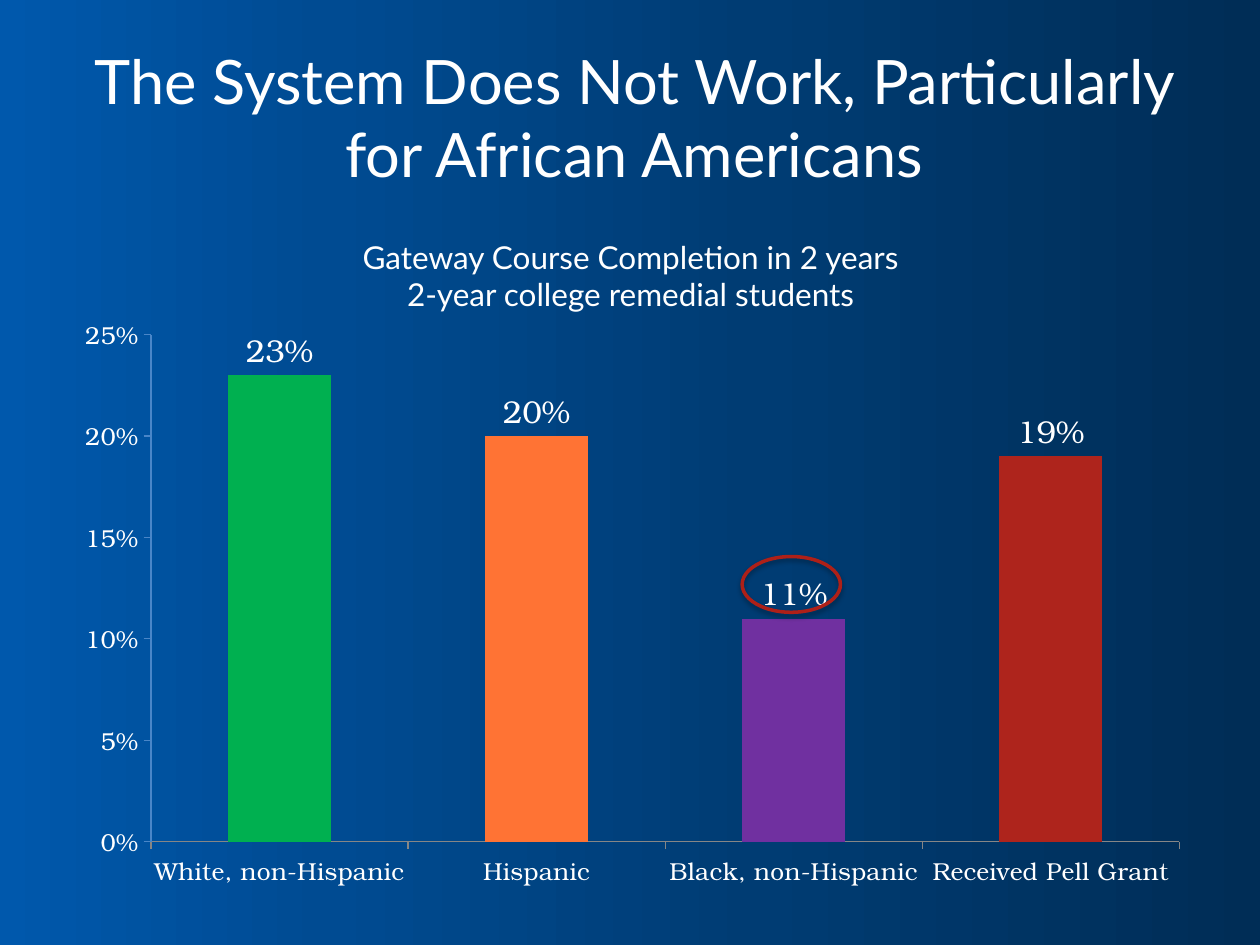
from lxml.etree import SubElement
from pptx import Presentation
from pptx.chart.data import CategoryChartData as Data
from pptx.dml.color import RGBColor as RGB
from pptx.enum.chart import XL_CHART_TYPE as Kind, XL_LABEL_POSITION as Spot, XL_TICK_MARK as Tick
from pptx.enum.shapes import MSO_SHAPE as Form
from pptx.enum.text import MSO_ANCHOR as Anchor, PP_ALIGN as Align
from pptx.oxml.ns import qn
from pptx.util import Inches, Pt

WHITE = RGB(0xFF, 0xFF, 0xFF)
BLACK = RGB(0, 0, 0)
BASE = RGB(0x00, 0x5A, 0xAC)
GREEN = RGB(0x00, 0xB0, 0x50)
ORANGE = RGB(0xFF, 0x73, 0x34)
PURPLE = RGB(0x70, 0x30, 0xA0)
BRICK = RGB(0xAE, 0x24, 0x1C)
RED = RGB(0xAE, 0x20, 0x18)
GRAY = RGB(0x86, 0x86, 0x86)
SKY = RGB(0x4A, 0x86, 0xC8)
STOPS = (
    (0, RGB(0x00, 0x58, 0xAC)),
    (26, RGB(0x00, 0x4B, 0x92)),
    (60, RGB(0x00, 0x3C, 0x73)),
    (100, RGB(0x00, 0x2D, 0x56)),
)
SANS = "Lato"
SERIF = "TeX Gyre Bonum"
WIDE, HIGH = 10, 7.5
RATES = {
    "White, non-Hispanic": (0.23, GREEN),
    "Hispanic": (0.20, ORANGE),
    "Black, non-Hispanic": (0.11, PURPLE),
    "Received Pell Grant": (0.19, BRICK),
}


def area(left, top, width, height):
    return [Inches(n) for n in (left * WIDE, top * HIGH, width * WIDE, height * HIGH)]


def style(font, size, color, face):
    font.size = Pt(size)
    font.color.rgb = color
    font.name = face
    font.bold = False


def shade(shape):
    shape.shadow.inherit = False
    effect = shape._element.spPr.find(qn("a:effectLst"))
    drop = SubElement(effect, qn("a:outerShdw"), blurRad=str(Pt(3.1)),
                      dist=str(Pt(1.8)), dir="5400000", rotWithShape="0")
    tint = SubElement(drop, qn("a:srgbClr"), val=str(BLACK))
    SubElement(tint, qn("a:alpha"), val="35000")


def ground(slide, box):
    back = slide.background.fill
    back.solid()
    back.fore_color.rgb = BASE
    panel = slide.shapes.add_shape(Form.RECTANGLE, *box)
    panel.line.fill.background()
    panel.fill.gradient()
    panel.fill.gradient_angle = 0
    stops = panel._element.spPr.find(qn("a:gradFill")).find(qn("a:gsLst"))
    for old in list(stops):
        stops.remove(old)
    for share, color in STOPS:
        stop = SubElement(stops, qn("a:gs"), pos=str(share * 1000))
        SubElement(stop, qn("a:srgbClr"), val=str(color))
    shade(panel)


def words(slide, box, lines, size, anchor):
    frame = slide.shapes.add_textbox(*box).text_frame
    frame.word_wrap = True
    frame.vertical_anchor = anchor
    for i, line in enumerate(lines):
        para = frame.paragraphs[0] if i == 0 else frame.add_paragraph()
        para.alignment = Align.CENTER
        run = para.add_run()
        run.text = line
        style(run.font, size, WHITE, SANS)


def layout(chart, **shares):
    plot = chart._chartSpace.chart.plotArea
    for old in plot.findall(qn("c:layout")):
        plot.remove(old)
    outer = SubElement(plot, qn("c:layout"))
    plot.insert(0, outer)
    inner = SubElement(outer, qn("c:manualLayout"))
    SubElement(inner, qn("c:layoutTarget"), val="inner")
    for side in "xy":
        SubElement(inner, qn(f"c:{side}Mode"), val="edge")
    for side, share in shares.items():
        SubElement(inner, qn(f"c:{side}"), val=str(share))


def bars(slide, box):
    data = Data(number_format="0%")
    data.categories = list(RATES)
    data.add_series("Series 1", [rate for rate, _ in RATES.values()])
    chart = slide.shapes.add_chart(Kind.COLUMN_CLUSTERED, *box, data).chart
    style(chart.font, 10, BLACK, SERIF)
    chart.has_legend = False
    chart.has_title = False
    layout(chart, x=0.077, y=0.05, w=0.9, h=0.86)

    for axis, color in ((chart.category_axis, GRAY), (chart.value_axis, SKY)):
        axis.has_major_gridlines = False
        axis.major_tick_mark = Tick.OUTSIDE
        axis.minor_tick_mark = Tick.NONE
        axis.format.line.color.rgb = color
        axis.format.line.width = Pt(0.75)
        style(axis.tick_labels.font, 14, WHITE, SERIF)
    scale = chart.value_axis
    scale.minimum_scale, scale.maximum_scale, scale.major_unit = 0, 0.25, 0.05
    scale.tick_labels.number_format = "0%"
    scale.tick_labels.number_format_is_linked = False

    plot = chart.plots[0]
    plot.gap_width = 150
    plot.vary_by_categories = False
    series = plot.series[0]
    series.format.fill.solid()
    series.format.fill.fore_color.rgb = BRICK
    for i, (_, color) in enumerate(RATES.values()):
        fill = series.points[i].format.fill
        fill.solid()
        fill.fore_color.rgb = color
    labels = series.data_labels
    labels.show_value = True
    labels.position = Spot.OUTSIDE_END
    labels.number_format = "0%"
    labels.number_format_is_linked = False
    style(labels.font, 18, WHITE, SERIF)


def ring(slide, box):
    oval = slide.shapes.add_shape(Form.OVAL, *box)
    oval.fill.background()
    oval.line.color.rgb = RED
    oval.line.width = Pt(2)
    shade(oval)


def main():
    deck = Presentation()
    deck.slide_width, deck.slide_height = Inches(WIDE), Inches(HIGH)
    slide = deck.slides.add_slide(deck.slide_layouts[6])
    ground(slide, area(0, 0, 1, 1))
    words(slide, area(0.05, 0.04, 0.907, 0.167),
          ["The System Does Not Work, Particularly for African Americans"],
          35, Anchor.MIDDLE)
    words(slide, area(0.251, 0.245, 0.499, 0.095),
          ["Gateway Course Completion in 2 years", "2-year college remedial students"],
          18, Anchor.TOP)
    bars(slide, area(0.05, 0.323, 0.907, 0.624))
    ring(slide, area(0.589, 0.589, 0.078, 0.059))
    deck.save("out.pptx")


if __name__ == "__main__":
    main()
